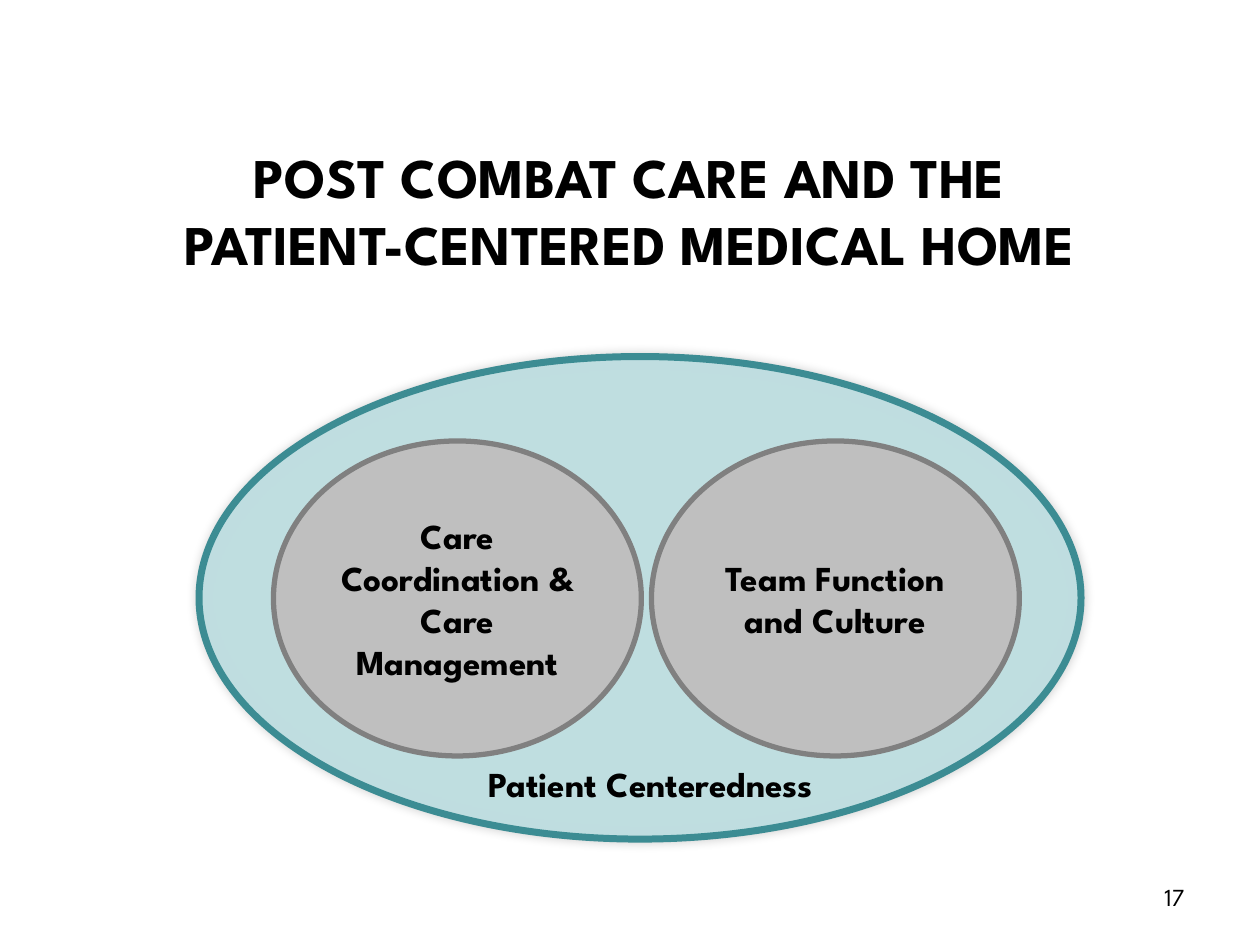
from lxml import etree
from pptx import Presentation
from pptx.dml.color import RGBColor
from pptx.enum.shapes import MSO_SHAPE as Shape
from pptx.enum.text import MSO_ANCHOR as Anchor, PP_ALIGN as Align
from pptx.oxml.ns import qn
from pptx.util import Inches, Pt

FONT = "League Spartan"
BLACK = RGBColor(0x00, 0x00, 0x00)
PALE_TEAL = RGBColor(0xBB, 0xE0, 0xE3)
TEAL = RGBColor(0x3C, 0x8C, 0x93)
SILVER = RGBColor(0xBF, 0xBF, 0xBF)
GRAY = RGBColor(0x80, 0x80, 0x80)


def write_text(shape, text, size=20, bold=True, align=Align.CENTER, anchor=Anchor.TOP):
    frame = shape.text_frame
    frame.word_wrap = True
    frame.vertical_anchor = anchor
    frame.text = text
    for paragraph in frame.paragraphs:
        paragraph.alignment = align
        font = paragraph.font
        font.name, font.size, font.bold = FONT, Pt(size), bold
        font.color.rgb = BLACK


def add_text(slide, text, left, top, width, height, **text_format):
    box = slide.shapes.add_textbox(Inches(left), Inches(top), Inches(width), Inches(height))
    write_text(box, text, **text_format)


def add_ellipse(slide, left, top, width, height, fill, line, line_width):
    ellipse = slide.shapes.add_shape(
        Shape.OVAL, Inches(left), Inches(top), Inches(width), Inches(height))
    ellipse.shadow.inherit = False
    ellipse.fill.solid()
    ellipse.fill.fore_color.rgb = fill
    ellipse.line.color.rgb = line
    ellipse.line.width = Pt(line_width)
    return ellipse


def set_alpha(color_element, percent):
    etree.SubElement(color_element, qn("a:alpha"), val=str(percent * 1000))


def add_soft_shadow(shape, blur, percent, direction):
    effects = shape._element.spPr.find(qn("a:effectLst"))
    shadow = etree.SubElement(
        effects, qn("a:outerShdw"), blurRad=str(Pt(blur)), dist="0",
        dir=str(direction * 60000), algn="ctr", rotWithShape="0")
    set_alpha(etree.SubElement(shadow, qn("a:srgbClr"), val=str(BLACK)), percent)


def main():
    presentation = Presentation()
    presentation.slide_width, presentation.slide_height = Inches(10), Inches(7.5)
    slide = presentation.slides.add_slide(presentation.slide_layouts[6])

    # Page number and title
    add_text(slide, "17", 7.17, 6.95, 2.33, 0.4, size=14, bold=False, align=Align.RIGHT)
    add_text(slide, "POST COMBAT CARE AND THE\nPATIENT-CENTERED MEDICAL HOME",
             0, 1.08, 10, 1.18, size=32)

    # Surrounding ellipse with its label
    surround = add_ellipse(slide, 1.58, 2.83, 7, 3.83, PALE_TEAL, TEAL, 4)
    set_alpha(surround._element.spPr.find(qn("a:solidFill"))[0], 83)
    add_soft_shadow(surround, blur=6, percent=20, direction=225)
    add_text(slide, "Patient Centeredness", 3.08, 6, 4.17, 0.44)

    # Inner ellipses
    for left, label in ((5.17, "Team Function and Culture"),
                        (2.17, "Care Coordination & Care Management")):
        ellipse = add_ellipse(slide, left, 3.5, 2.92, 2.5, SILVER, GRAY, 3)
        write_text(ellipse, label, anchor=Anchor.MIDDLE)

    presentation.save("out.pptx")


if __name__ == "__main__":
    main()
